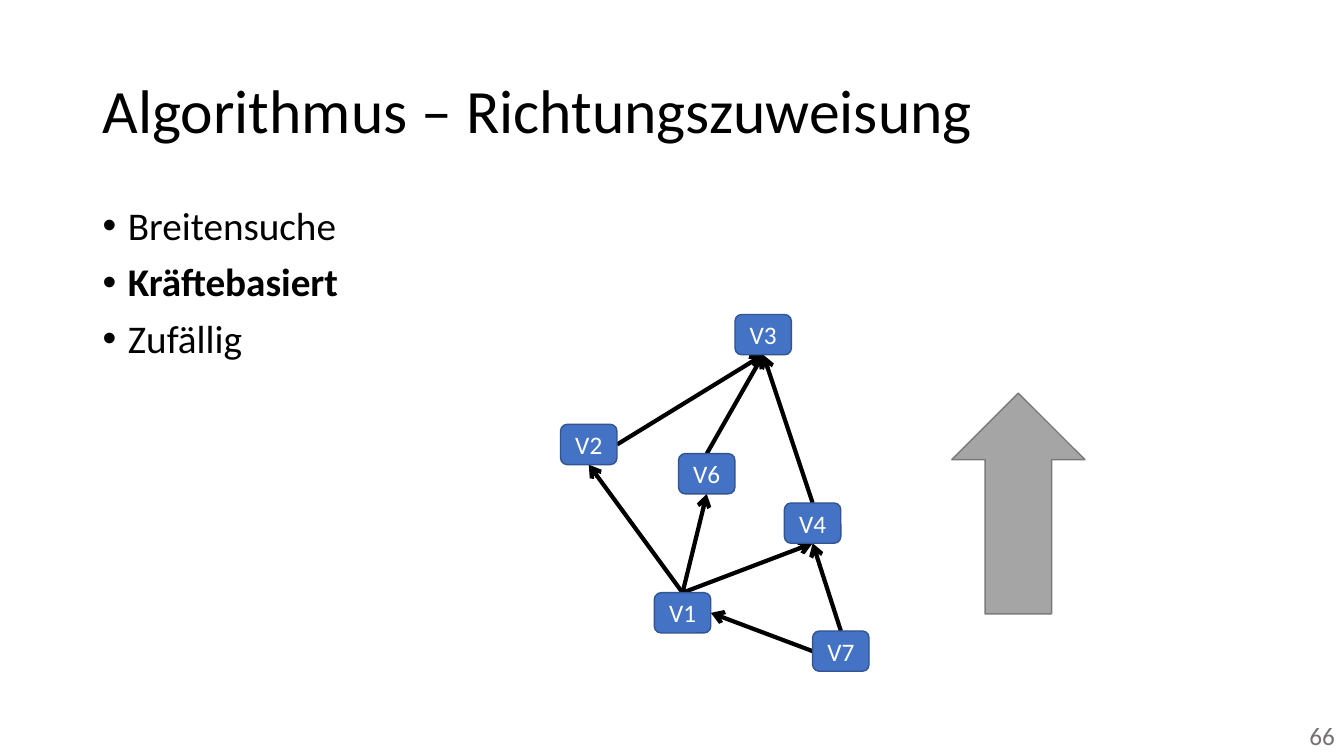
"""Builds a slide on assigning edge directions in a graph."""
from dataclasses import dataclass

from lxml.etree import SubElement
from pptx import Presentation
from pptx.dml.color import RGBColor
from pptx.enum.shapes import MSO_CONNECTOR, MSO_SHAPE
from pptx.enum.text import MSO_ANCHOR, PP_ALIGN
from pptx.oxml.ns import qn
from pptx.util import Inches, Pt

TITLE = "Algorithmus – Richtungszuweisung"
METHODS = [("Breitensuche", False), ("Kräftebasiert", True), ("Zufällig", False)]
PAGE = "66"
VERTICES = {
    "V1": (6.49, 5.88),
    "V2": (5.56, 4.21),
    "V3": (7.29, 3.12),
    "V4": (7.78, 4.99),
    "V6": (6.73, 4.5),
    "V7": (8.06, 6.26),
}
TOP, LEFT, BOTTOM, RIGHT = range(4)
EDGES = [
    ("V1", TOP, "V2", BOTTOM),
    ("V1", TOP, "V6", BOTTOM),
    ("V1", TOP, "V4", BOTTOM),
    ("V7", LEFT, "V1", RIGHT),
    ("V2", RIGHT, "V3", BOTTOM),
    ("V6", TOP, "V3", BOTTOM),
    ("V4", TOP, "V3", BOTTOM),
    ("V7", TOP, "V4", BOTTOM),
]
VERTEX_SIZE = (0.56, 0.4)
DIRECTION_BOX = (9.44, 3.9, 1.32, 2.19)


@dataclass(frozen=True)
class Theme:
    font: str = "Calibri"
    ink: str = "000000"
    vertex: str = "4472C4"
    vertex_line: str = "325491"
    vertex_text: str = "FFFFFF"
    direction: str = "A5A5A5"
    direction_line: str = "7A7A7A"
    page: str = "767171"
    title_size: int = 44
    body_size: int = 28
    small_size: int = 18


THEME = Theme()


def add_run(paragraph, words, size, color, bold=False):
    run = paragraph.add_run()
    run.text = words
    run.font.name = THEME.font
    run.font.size = Pt(size)
    run.font.bold = bold
    run.font.color.rgb = RGBColor.from_string(color)


def add_frame(slide, box, anchor=MSO_ANCHOR.TOP, wrap=True):
    frame = slide.shapes.add_textbox(*map(Inches, box)).text_frame
    frame.word_wrap = wrap
    frame.vertical_anchor = anchor
    return frame


def add_block(slide, preset, box, fill, line):
    block = slide.shapes.add_shape(preset, *map(Inches, box))
    block.shadow.inherit = False
    block.fill.solid()
    block.fill.fore_color.rgb = RGBColor.from_string(fill)
    block.line.color.rgb = RGBColor.from_string(line)
    block.line.width = Pt(1)
    return block


def add_edge(slide):
    edge = slide.shapes.add_connector(MSO_CONNECTOR.STRAIGHT, 0, 0, 0, 0)
    edge.line.color.rgb = RGBColor.from_string(THEME.ink)
    edge.line.width = Pt(3)
    SubElement(edge.line._get_or_add_ln(), qn("a:tailEnd"), type="arrow")
    SubElement(edge._element.spPr, qn("a:effectLst"))
    return edge


def add_vertex(slide, label, corner):
    vertex = add_block(slide, MSO_SHAPE.ROUNDED_RECTANGLE, corner + VERTEX_SIZE,
                       THEME.vertex, THEME.vertex_line)
    frame = vertex.text_frame
    frame.word_wrap = False
    frame.vertical_anchor = MSO_ANCHOR.MIDDLE
    frame.paragraphs[0].alignment = PP_ALIGN.CENTER
    add_run(frame.paragraphs[0], label, THEME.small_size, THEME.vertex_text)
    return vertex


def add_methods(slide):
    frame = add_frame(slide, (0.92, 2, 5.65, 4.76))
    for index, (method, bold) in enumerate(METHODS):
        paragraph = frame.add_paragraph() if index else frame.paragraphs[0]
        paragraph.line_spacing = 0.9
        paragraph.space_before = Pt(10)
        properties = paragraph._p.get_or_add_pPr()
        properties.set("marL", str(Inches(0.25)))
        properties.set("indent", str(Inches(-0.25)))
        SubElement(properties, qn("a:buFont"), typeface="Arial")
        SubElement(properties, qn("a:buChar"), char="•")
        add_run(paragraph, method, THEME.body_size, THEME.ink, bold)


def add_graph(slide):
    edges = [add_edge(slide) for _ in EDGES]
    vertices = {label: add_vertex(slide, label, corner) for label, corner in VERTICES.items()}
    for edge, (source, source_side, target, target_side) in zip(edges, EDGES):
        edge.begin_connect(vertices[source], source_side)
        edge.end_connect(vertices[target], target_side)


def main():
    deck = Presentation()
    deck.slide_width, deck.slide_height = Inches(13.33), Inches(7.5)
    slide = deck.slides.add_slide(deck.slide_layouts[6])

    title = add_frame(slide, (0.92, 0.4, 11.5, 1.45), MSO_ANCHOR.MIDDLE).paragraphs[0]
    title.line_spacing = 0.9
    add_run(title, TITLE, THEME.title_size, THEME.ink)
    add_methods(slide)
    add_block(slide, MSO_SHAPE.UP_ARROW, DIRECTION_BOX, THEME.direction, THEME.direction_line)
    add_graph(slide)
    page = add_frame(slide, (12.88, 7.1, 0.46, 0.4), wrap=False).paragraphs[0]
    page.alignment = PP_ALIGN.RIGHT
    add_run(page, PAGE, THEME.small_size, THEME.page)

    deck.save("out.pptx")


if __name__ == "__main__":
    main()
